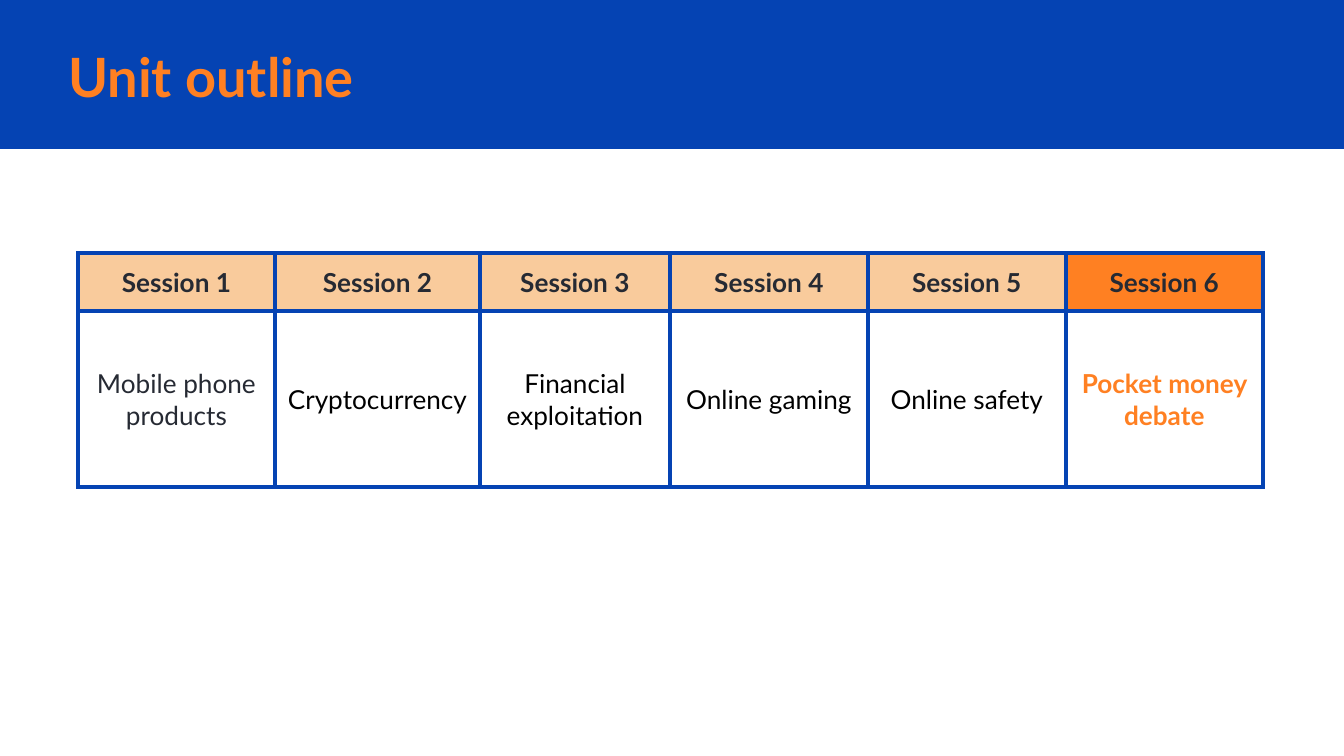
from lxml import etree
from pptx import Presentation
from pptx import util as u
from pptx.dml.color import RGBColor
from pptx.enum import shapes, text
from pptx.oxml.ns import qn

SCALE = 914400 / 134.4  # EMU per px
BLUE, ORANGE, PEACH = "0543B3", "FF8022", "F9CB9C"
DARK, BLACK = "262A33", "000000"


def px(n):
    return u.Emu(round(n * SCALE))


def rgb(hex_color):
    return RGBColor.from_string(hex_color)


class Deck:
    font = "Lato"

    def __init__(self, width, height):
        self.prs = Presentation()
        self.prs.slide_width, self.prs.slide_height = px(width), px(height)
        self.s = self.prs.slides.add_slide(self.prs.slide_layouts[5])

    def add_words(self, tf, words, align, color, size, bold):
        p = tf.paragraphs[0]
        p.alignment = align
        r = p.add_run()
        r.text = words
        for name, value in dict(name=self.font, size=u.Pt(size), bold=bold).items():
            setattr(r.font, name, value)
        r.font.color.rgb = rgb(color)

    def band(self, x, y, w, h, color):
        sp = self.s.shapes.add_shape(shapes.MSO_SHAPE.RECTANGLE, *map(px, (x, y, w, h)))
        sp.shadow.inherit = False
        sp.fill.solid()
        sp.fill.fore_color.rgb = rgb(color)
        sp.line.fill.background()

    def title(self, x, y, w, h, words):
        sp = self.s.shapes.title
        sp.left, sp.top, sp.width, sp.height = map(px, (x, y, w, h))
        # Bring the title in front of the band
        self.s.shapes._spTree.append(sp._element)
        tf = sp.text_frame
        inset = u.Inches(0.1)
        layout = dict(margin_left=inset, margin_right=inset, margin_top=inset,
                      margin_bottom=inset, word_wrap=True,
                      auto_size=text.MSO_AUTO_SIZE.NONE,
                      vertical_anchor=text.MSO_ANCHOR.MIDDLE)
        for name, value in layout.items():
            setattr(tf, name, value)
        self.add_words(tf, words, text.PP_ALIGN.LEFT, ORANGE, 29, True)

    def border(self, cell, color, width):
        tcPr = cell._tc.get_or_add_tcPr()
        for side in ("a:lnL", "a:lnR", "a:lnT", "a:lnB"):
            ln = etree.SubElement(tcPr, qn(side), w=str(u.Pt(width)))
            fill = etree.SubElement(ln, qn("a:solidFill"))
            etree.SubElement(fill, qn("a:srgbClr"), val=color)

    def cell(self, cell, words, color, bold, fill, inset):
        for side in ("left", "right", "top", "bottom"):
            setattr(cell, f"margin_{side}", u.Inches(inset))
        cell.vertical_anchor = text.MSO_ANCHOR.MIDDLE
        self.border(cell, BLUE, 2.25)
        if fill:
            cell.fill.solid()
            cell.fill.fore_color.rgb = rgb(fill)
        else:
            cell.fill.background()
        self.add_words(cell.text_frame, words, text.PP_ALIGN.CENTER, color, 14, bold)

    def table(self, x, y, widths, heights):
        box = map(px, (x, y, sum(widths), sum(heights)))
        table = self.s.shapes.add_table(len(heights), len(widths), *box).table
        table.first_row = table.horz_banding = False
        for column, width in zip(table.columns, widths):
            column.width = px(width)
        for row, height in zip(table.rows, heights):
            row.height = px(height)
        return table


def main():
    deck = Deck(1344, 756)

    # Header
    deck.band(0, 0, 1344, 149, BLUE)
    deck.title(55, 38, 1137, 75, "Unit outline")

    # Sessions: topic, colour; the last one is the current session
    sessions = [("Mobile phone products", DARK), ("Cryptocurrency", BLACK),
                ("Financial exploitation", BLACK), ("Online gaming", BLACK),
                ("Online safety", BLACK), ("Pocket money debate", ORANGE)]
    table = deck.table(78, 253, [197, 205, 190, 198, 198, 197], [58, 176])
    for i, (topic, color) in enumerate(sessions):
        current = i == len(sessions) - 1
        deck.cell(table.cell(0, i), f"Session {i + 1}", DARK, True,
                  ORANGE if current else PEACH, 0.1)
        deck.cell(table.cell(1, i), topic, color, current, None, 0.07)

    deck.prs.save("out.pptx")


if __name__ == "__main__":
    main()
